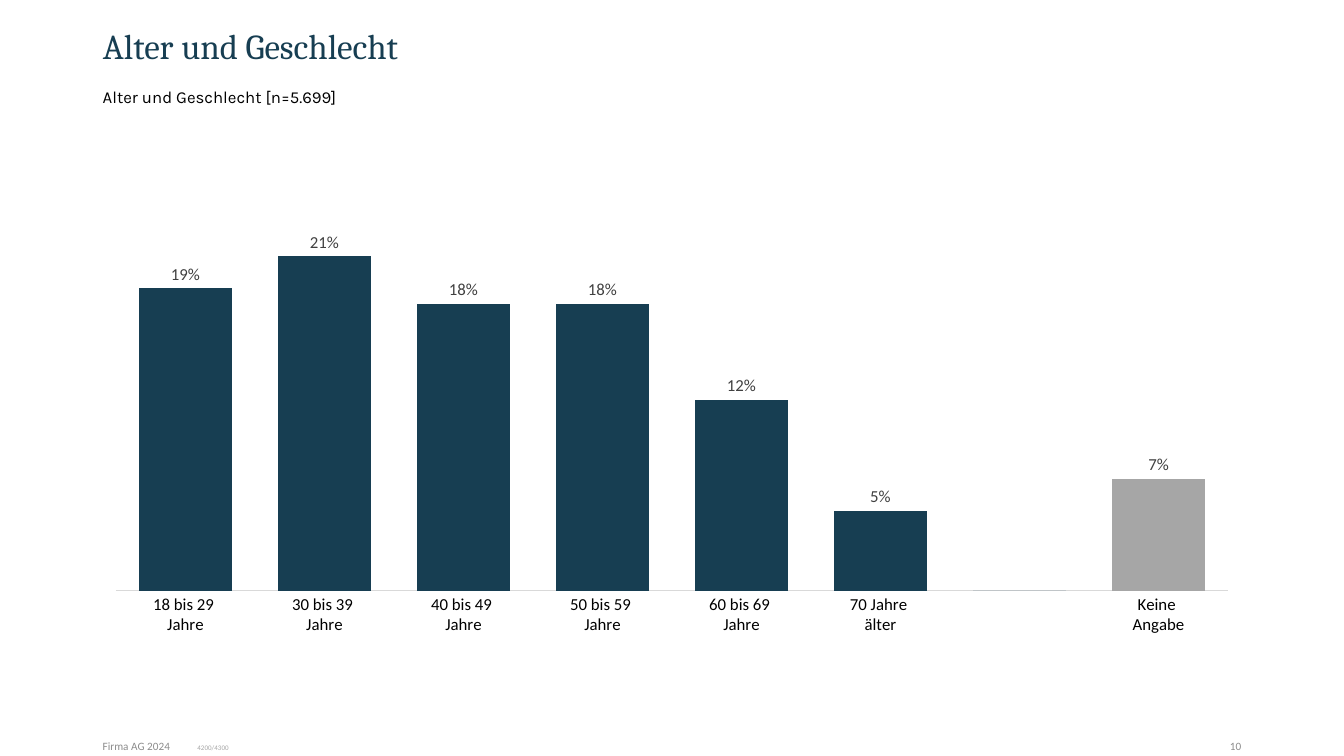
from lxml import etree
from pptx import Presentation
from pptx.chart.data import CategoryChartData
from pptx.dml.color import RGBColor
from pptx.enum.chart import XL_CHART_TYPE as ChartType
from pptx.enum.chart import XL_LABEL_POSITION as LabelPosition
from pptx.enum.chart import XL_TICK_MARK as TickMark
from pptx.enum.text import MSO_ANCHOR as Anchor
from pptx.enum.text import PP_ALIGN as Align
from pptx.oxml.ns import qn
from pptx.util import Inches, Pt

NAVY, GREY, FOOTER_GREY = "173E52", "A6A6A6", "8C8C8C"
LEFT, WIDTH = 0.92, 11.49
AGE_SHARES = {
    "18 bis 29 \nJahre": 0.19,
    "30 bis 39 \nJahre": 0.21,
    "40 bis 49 \nJahre": 0.18,
    "50 bis 59 \nJahre": 0.18,
    "60 bis 69 \nJahre": 0.12,
    "70 Jahre \nälter": 0.05,
    " ": 0,
    "Keine \nAngabe": 0.07,
}


def color(hex_value):
    return RGBColor.from_string(hex_value)


def style_font(font, size, hex_value, name="Calibri"):
    font.name = name
    font.size = Pt(size)
    font.bold = False
    font.color.rgb = color(hex_value)


def place(shape, box):
    shape.left, shape.top, shape.width, shape.height = map(Inches, box)


def write(shape, text, size, hex_value, name="Calibri",
          align=Align.LEFT, anchor=Anchor.MIDDLE):
    frame = shape.text_frame
    frame.word_wrap = True
    frame.vertical_anchor = anchor
    paragraph = frame.paragraphs[0]
    paragraph.alignment = align
    run = paragraph.add_run()
    run.text = text
    style_font(run.font, size, hex_value, name)
    return paragraph


def add_text(slide, box, text, size, hex_value, **options):
    shape = slide.shapes.add_textbox(*map(Inches, box))
    return shape, write(shape, text, size, hex_value, **options)


def add_heading(slide, left, top, width):
    # Title
    title = slide.shapes.title
    place(title, (left, top, width, 0.68))
    write(title, "Alter und Geschlecht", 25, NAVY, "Cambria").line_spacing = 0.9
    # Subtitle with sample size
    _, subtitle = add_text(slide, (left, top + 0.69, width, 0.5),
                           "Alter und Geschlecht [n=5.699]", 12, "000000",
                           name="Karla", anchor=Anchor.TOP)
    subtitle.line_spacing = 0.9
    subtitle.space_before = Pt(10)


def set_plot_layout(chart, **fractions):
    plot_area = chart.plots[0]._element.getparent()
    layout = plot_area.find(qn("c:layout"))
    if layout is None:
        layout = etree.Element(qn("c:layout"))
        plot_area.insert(0, layout)
    manual = etree.SubElement(layout, qn("c:manualLayout"))
    settings = {"layoutTarget": "inner", "xMode": "edge", "yMode": "edge", **fractions}
    for tag, value in settings.items():
        etree.SubElement(manual, qn(f"c:{tag}")).set("val", str(value))


def add_age_chart(slide, box):
    data = CategoryChartData(number_format="0%")
    data.categories = list(AGE_SHARES)
    data.add_series("Series 1", list(AGE_SHARES.values()))
    chart = slide.shapes.add_chart(ChartType.COLUMN_CLUSTERED,
                                   *map(Inches, box), data).chart
    chart.has_legend = False
    chart.has_title = False
    style_font(chart.font, 10, "000000")
    set_plot_layout(chart, x=0.02, y=0.02, w=0.96, h=0.86)

    # Axes
    ages = chart.category_axis
    ages.major_tick_mark = TickMark.NONE
    ages.format.line.color.rgb = color("D9D9D9")
    ages.format.line.width = Pt(0.75)
    style_font(ages.tick_labels.font, 12, "000000")
    shares = chart.value_axis
    shares.minimum_scale, shares.maximum_scale = 0, 0.25
    shares.has_major_gridlines = False
    shares.visible = False

    # Columns, with the missing answers in grey
    plot = chart.plots[0]
    plot.gap_width = 50
    plot.vary_by_categories = False
    series = plot.series[0]
    series.invert_if_negative = False
    no_answer = series.points[len(AGE_SHARES) - 1]
    for part, fill_color in ((series, NAVY), (no_answer, GREY)):
        part.format.fill.solid()
        part.format.fill.fore_color.rgb = color(fill_color)

    # Labels; the format leaves zero blank
    labels = series.data_labels
    labels.show_value = True
    labels.position = LabelPosition.OUTSIDE_END
    labels.number_format = "0%;;"
    labels.number_format_is_linked = False
    style_font(labels.font, 12, "404040")


def add_footer(slide, left, top, width):
    add_text(slide, (left, top, 3, 0.2), "Firma AG 2024", 8, FOOTER_GREY)
    add_text(slide, (left + width - 3, top, 3, 0.2), "10", 8, FOOTER_GREY,
             align=Align.RIGHT)
    code, _ = add_text(slide, (left + 0.94, top - 0.14, 2.35, 0.4),
                       "4200/4300", 5, GREY, anchor=Anchor.BOTTOM)
    code.text_frame.margin_bottom = Inches(0.1)


def main():
    presentation = Presentation()
    presentation.slide_width = Inches(13.33)
    presentation.slide_height = Inches(7.5)
    slide = presentation.slides.add_slide(presentation.slide_layouts[5])
    add_heading(slide, LEFT, 0.14, WIDTH)
    add_age_chart(slide, (LEFT, 1.82, WIDTH, 4.59))
    add_footer(slide, LEFT, 7.3, WIDTH)
    presentation.save("out.pptx")


if __name__ == "__main__":
    main()
